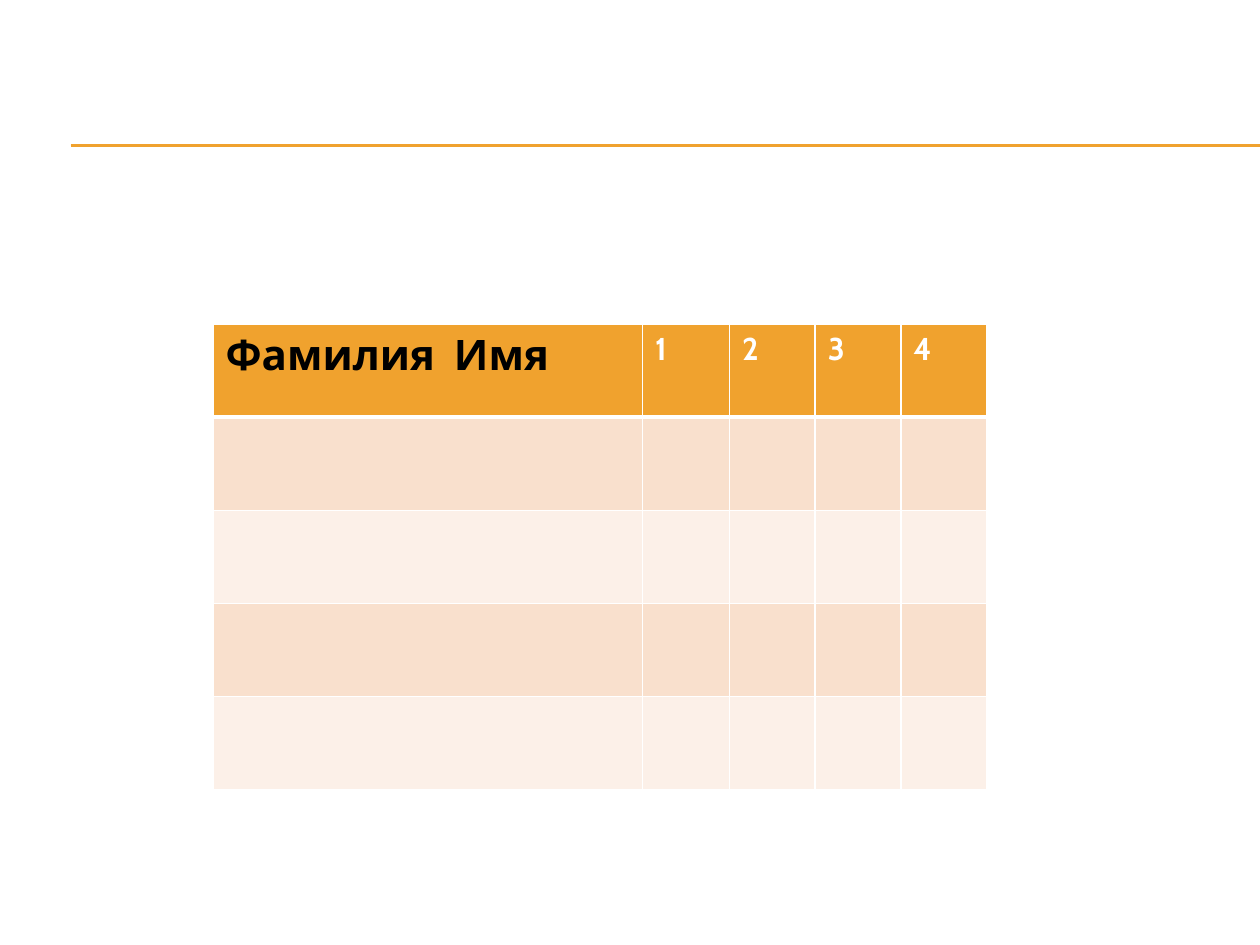
import pptx
import pptx.dml.color
import pptx.enum.shapes
import pptx.oxml
import pptx.oxml.ns
import pptx.util

HUES = {"gold": "F0A22E", "peach": "F9E0CD", "cream": "FCF0E8",
        "white": "FFFFFF", "black": "000000"}
COLS, ROWS = 100, 75


class Deck:
    """Style and current slide, laid out on a grid of 100 columns and 75 rows."""

    def __init__(self):
        self.font = "Cabin"
        self.prs = pptx.Presentation()
        self.prs.slide_width = pptx.util.Inches(10)
        self.prs.slide_height = pptx.util.Inches(7.5)
        self.slide = self.prs.slides.add_slide(self.prs.slide_layouts[6])

    def col(self, n):
        return round(self.prs.slide_width * n / COLS)

    def row(self, n):
        return round(self.prs.slide_height * n / ROWS)

    def hue(self, name):
        return pptx.dml.color.RGBColor.from_string(HUES[name])

    def rule(self, left, right, top):
        line = self.slide.shapes.add_connector(
            pptx.enum.shapes.MSO_CONNECTOR.STRAIGHT,
            self.col(left), self.row(top), self.col(right), self.row(top))
        line.line.color.rgb = self.hue("gold")
        line.line.width = pptx.util.Pt(0.75)
        props = line._element.spPr
        props.append(props.makeelement(pptx.oxml.ns.qn("a:effectLst"), {}))

    def edge(self, cell, side, width):
        space = pptx.oxml.ns.nsdecls("a")
        cell._tc.get_or_add_tcPr().append(pptx.oxml.parse_xml(
            f'<a:ln{side} {space} w="{pptx.util.Pt(width)}"><a:solidFill>'
            f'<a:srgbClr val="{HUES["white"]}"/></a:solidFill></a:ln{side}>'))

    def label(self, cell, text, size, hue):
        cell.text = text
        font = cell.text_frame.paragraphs[0].font
        font.name, font.size, font.bold = self.font, pptx.util.Pt(size), True
        font.color.rgb = self.hue(hue)

    def table(self, left, top, wides, high, heads, fills):
        grid = self.slide.shapes.add_table(
            len(fills), len(wides), self.col(left), self.row(top),
            self.col(sum(wides)), self.row(high * len(fills))).table
        for band, wide in zip(grid.columns, wides):
            band.width = self.col(wide)
        for r, fill in enumerate(fills):
            grid.rows[r].height = self.row(high)
            for c in range(len(wides)):
                cell = grid.cell(r, c)
                for side in "LRTB":
                    thick = (r, side) in ((0, "B"), (1, "T"))
                    self.edge(cell, side, 3 if thick else 1)
                cell.fill.solid()
                cell.fill.fore_color.rgb = self.hue(fill)
        for c, (text, size, hue) in enumerate(heads):
            self.label(grid.cell(0, c), text, size, hue)


def main():
    deck = Deck()
    for top in (11.5, 11.6):
        deck.rule(5.6, COLS, top)
    heads = [("Фамилия  Имя", 24, "black")]
    heads += [(str(n), 18, "white") for n in range(1, 5)]
    deck.table(16.9, 25.7, [34.1, 6.9] + [6.8] * 3, 7.4, heads,
               ["gold"] + ["peach", "cream"] * 2)
    deck.prs.save("out.pptx")


if __name__ == "__main__":
    main()
